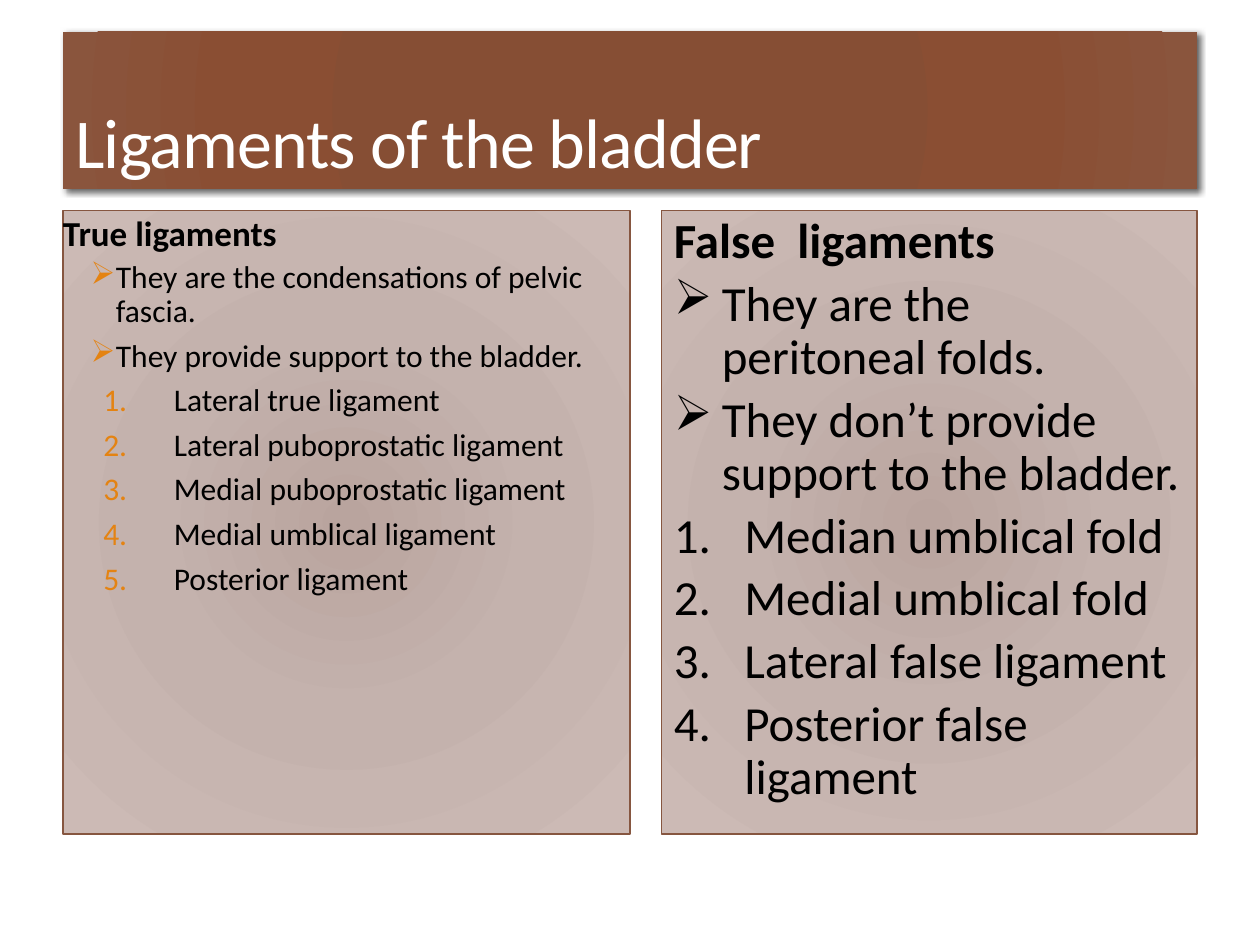
import dataclasses
import typing

import pptx
import pptx.dml.color
import pptx.enum.shapes
import pptx.enum.text
import pptx.oxml
import pptx.oxml.ns
import pptx.util
from pptx.util import Inches

Stops = tuple[tuple[int, str], ...]


@dataclasses.dataclass(frozen=True)
class Theme:
    font: str = "Calibri"
    title_size: float = 40
    heading_size: float = 20
    true_size: float = 18
    false_size: float = 28
    title_text: str = "FFFFFF"
    body_text: str = "000000"
    accent: str = "E48312"
    border: str = "865640"
    shadow: str = "000000"
    title_fill: Stops = ((0, "874C32"), (34, "864E34"), (70, "8A4E33"), (100, "8A553D"))
    panel_fill: Stops = ((0, "B9A49E"), (45, "C4B2AD"), (100, "CCBAB5"))


THEME = Theme()


class Box(typing.NamedTuple):
    left: float
    top: float
    width: float
    height: float


@dataclasses.dataclass(frozen=True)
class Style:
    """Indents are in inches; spacing and size are in points."""
    size: float
    margin: float = 0
    hanging: float = 0
    before: float = 0
    after: float = 0
    line: float = 0.9
    bold: bool = False
    color: str = THEME.body_text
    bullet: str = ""
    bullet_color: str = ""


class Line(typing.NamedTuple):
    text: str
    style: Style


TITLE = Style(THEME.title_size, line=0.85, color=THEME.title_text)

TRUE_HEADING = Style(THEME.heading_size, 0.1, 0.1, before=12, after=2, bold=True)
TRUE_POINT = Style(THEME.true_size, 0.42, 0.2, before=2, after=4,
                   bullet="➢", bullet_color=THEME.accent)
TRUE_NUMBER = dataclasses.replace(TRUE_POINT, margin=0.88, hanging=0.56, bullet="1.")

FALSE_HEADING = Style(THEME.false_size, 0.38, 0.38, before=5.6, bold=True)
FALSE_POINT = dataclasses.replace(FALSE_HEADING, bold=False, bullet="➢")
FALSE_NUMBER = dataclasses.replace(FALSE_POINT, margin=0.56, hanging=0.56, bullet="1.")

TRUE_LINES = [
    Line("True ligaments", TRUE_HEADING),
    Line("They are the condensations of pelvic fascia.", TRUE_POINT),
    Line("They provide support to the bladder.", TRUE_POINT),
    Line("Lateral true ligament", TRUE_NUMBER),
    Line("Lateral puboprostatic ligament", TRUE_NUMBER),
    Line("Medial puboprostatic ligament", TRUE_NUMBER),
    Line("Medial umblical ligament", TRUE_NUMBER),
    Line("Posterior ligament", TRUE_NUMBER),
]
FALSE_LINES = [
    Line("False  ligaments", FALSE_HEADING),
    Line("They are the peritoneal folds.", FALSE_POINT),
    Line("They don’t provide support to the bladder.", FALSE_POINT),
    Line("Median umblical fold", FALSE_NUMBER),
    Line("Medial umblical fold", FALSE_NUMBER),
    Line("Lateral false ligament", FALSE_NUMBER),
    Line("Posterior false ligament", FALSE_NUMBER),
]


def rgb(value: str) -> pptx.dml.color.RGBColor:
    return pptx.dml.color.RGBColor.from_string(value)


def drawing_xml(tag: str, content: str = "", attributes: str = ""):
    """Make one element of the DrawingML namespace."""
    namespace = pptx.oxml.ns.nsdecls("a")
    return pptx.oxml.parse_xml(f"<a:{tag} {namespace} {attributes}>{content}</a:{tag}>")


def fill_radial(shape, stops: Stops) -> None:
    """Fill from the centre of the shape outwards."""
    shape.fill.background()
    stop_xml = "".join(
        f'<a:gs pos="{position * 1000}"><a:srgbClr val="{color}"/></a:gs>'
        for position, color in stops)
    centre = '<a:fillToRect l="100000" t="100000" r="100000" b="100000"/>'
    gradient = drawing_xml(
        "gradFill", f'<a:gsLst>{stop_xml}</a:gsLst><a:path path="circle">{centre}</a:path>',
        'rotWithShape="1"')
    properties = shape.element.spPr
    properties.replace(properties.find(pptx.oxml.ns.qn("a:noFill")), gradient)


def add_shadow(shape) -> None:
    effects = shape.element.spPr.find(pptx.oxml.ns.qn("a:effectLst"))
    effects.append(drawing_xml(
        "outerShdw",
        f'<a:srgbClr val="{THEME.shadow}"><a:alpha val="60000"/></a:srgbClr>',
        f'blurRad="{pptx.util.Pt(3.5)}" dist="{pptx.util.Pt(2)}" dir="2700000" '
        'algn="tl" rotWithShape="0"'))


def add_panel(page, box: Box, stops: Stops, border: str = ""):
    shape = page.shapes.add_shape(
        pptx.enum.shapes.MSO_SHAPE.RECTANGLE, *(Inches(length) for length in box))
    shape.shadow.inherit = False
    fill_radial(shape, stops)
    if border:
        shape.line.color.rgb = rgb(border)
        shape.line.width = pptx.util.Pt(1)
    else:
        shape.line.fill.background()
    return shape


def format_paragraph(para, style: Style) -> None:
    para.alignment = pptx.enum.text.PP_ALIGN.LEFT
    para.line_spacing = style.line
    para.space_before = pptx.util.Pt(style.before)
    para.space_after = pptx.util.Pt(style.after)
    properties = para._p.get_or_add_pPr()
    properties.set("marL", str(Inches(style.margin)))
    properties.set("indent", str(-Inches(style.hanging)))
    if style.bullet_color:
        properties.append(drawing_xml("buClr", f'<a:srgbClr val="{style.bullet_color}"/>'))
    if style.bullet == "1.":
        properties.append(drawing_xml("buAutoNum", attributes='type="arabicPeriod"'))
    elif style.bullet:
        properties.append(drawing_xml("buChar", attributes=f'char="{style.bullet}"'))
    for span in para.runs:
        span.font.name = THEME.font
        span.font.size = pptx.util.Pt(style.size)
        span.font.bold = style.bold
        span.font.color.rgb = rgb(style.color)


def write_lines(shape, lines: list[Line], anchor=pptx.enum.text.MSO_ANCHOR.TOP) -> None:
    frame = shape.text_frame
    frame.word_wrap = True
    frame.vertical_anchor = anchor
    frame.text = "\n".join(line.text for line in lines)
    for para, line in zip(frame.paragraphs, lines):
        format_paragraph(para, line.style)


def main() -> None:
    deck = pptx.Presentation()
    deck.slide_width, deck.slide_height = Inches(10), Inches(7.5)
    page = deck.slides.add_slide(deck.slide_layouts[6])

    title = add_panel(page, Box(0.5, 0.25, 9, 1.25), THEME.title_fill)
    add_shadow(title)
    write_lines(title, [Line("Ligaments of the bladder", TITLE)],
                pptx.enum.text.MSO_ANCHOR.BOTTOM)
    for span in title.text_frame.paragraphs[0].runs:
        span.font._element.set("spc", "-50")

    true_panel = add_panel(page, Box(0.5, 1.67, 4.5, 4.95), THEME.panel_fill, THEME.border)
    true_panel.text_frame.margin_left = true_panel.text_frame.margin_right = 0
    write_lines(true_panel, TRUE_LINES)

    false_panel = add_panel(page, Box(5.25, 1.67, 4.25, 4.95), THEME.panel_fill, THEME.border)
    write_lines(false_panel, FALSE_LINES)

    deck.save("out.pptx")


if __name__ == "__main__":
    main()
